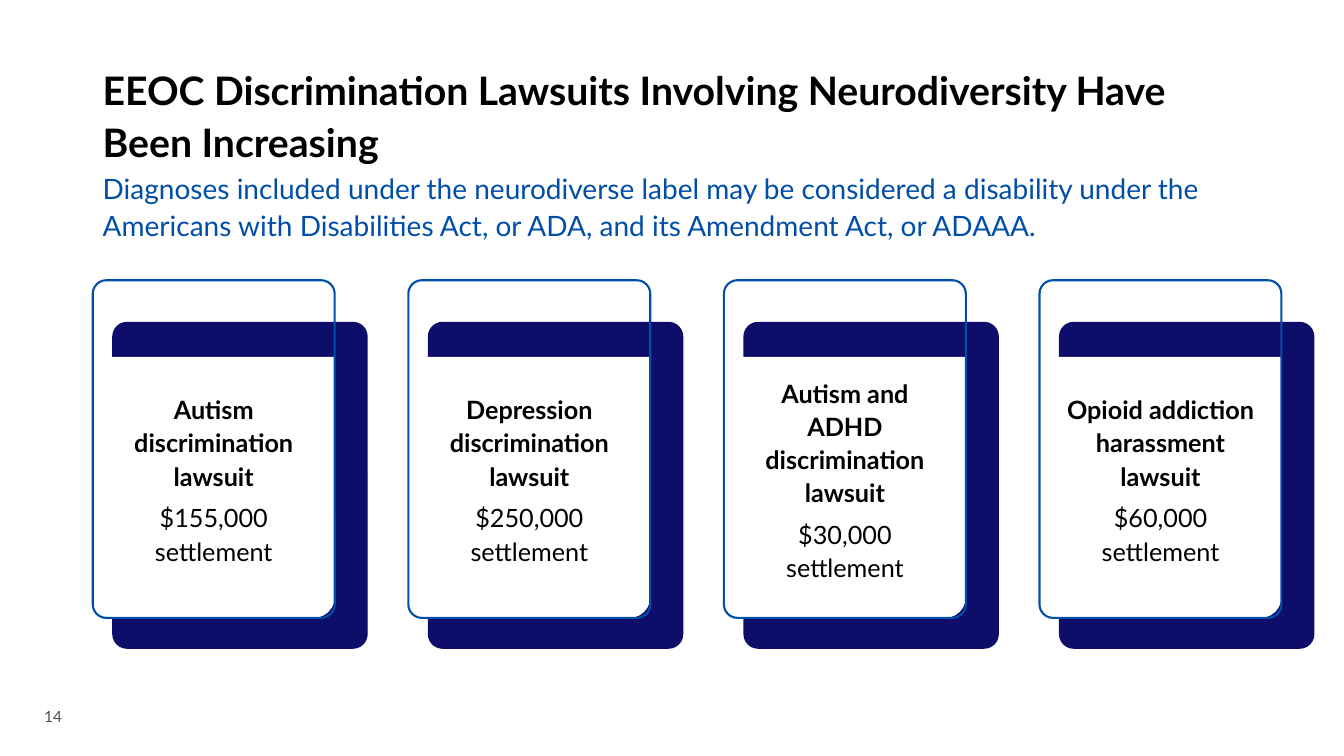
from pptx import Presentation
from pptx.dml.color import RGBColor
from pptx.enum.shapes import MSO_SHAPE as Shape
from pptx.enum.text import MSO_ANCHOR as Anchor, PP_ALIGN as Align
from pptx.util import Inches, Pt

COLORS = {"navy": "0E0D6A", "blue": "004EA8", "white": "FFFFFF", "black": "000000", "gray": "505050"}
CARDS = [
    ("Autism discrimination lawsuit", "$155,000 settlement"),
    ("Depression discrimination lawsuit", "$250,000 settlement"),
    ("Autism and ADHD discrimination lawsuit", "$30,000 settlement"),
    ("Opioid addiction harassment lawsuit", "$60,000 settlement"),
]
CARD_LEFT, CARD_STEP = 0.92, 3.13


class SlideBuilder:
    """Hold the slide style and draw each kind of element."""

    font = "Lato"

    def __init__(self, slide):
        self.slide = slide

    def color(self, name):
        return RGBColor.from_string(COLORS[name])

    def text(self, lines, left, top, width, height, size, color="black", bold_first=False,
             anchor=Anchor.TOP, align=Align.LEFT, spacing=1.1, after=0):
        box = self.slide.shapes.add_textbox(Inches(left), Inches(top), Inches(width), Inches(height))
        frame = box.text_frame
        frame.word_wrap = True
        frame.vertical_anchor = anchor
        for index, line in enumerate(lines):
            para = frame.add_paragraph() if index else frame.paragraphs[0]
            para.text = line
            para.alignment = align
            para.line_spacing = spacing
            para.space_after = Pt(after)
            font = para.runs[0].font
            font.name, font.size = self.font, Pt(size)
            font.bold = bold_first and index == 0
            font.color.rgb = self.color(color)

    def shape(self, kind, left, top, width, height, corners, fill=None, line=None, weight=1):
        shape = self.slide.shapes.add_shape(kind, Inches(left), Inches(top), Inches(width), Inches(height))
        shape.shadow.inherit = False
        for index, corner in enumerate(corners):
            shape.adjustments[index] = corner
        if fill:
            shape.fill.solid()
            shape.fill.fore_color.rgb = self.color(fill)
        else:
            shape.fill.background()
        if line:
            shape.line.color.rgb = self.color(line)
            shape.line.width = Pt(weight)
        else:
            shape.line.fill.background()

    def card(self, left, lines):
        self.shape(Shape.ROUNDED_RECTANGLE, left + 0.2, 3.2, 2.52, 3.23, [0.055], "navy", "navy")
        self.shape(Shape.ROUND_2_SAME_RECTANGLE, left - 0.01, 3.54, 2.41, 2.59, [0, 0.086], "white")
        self.text(lines, left + 0.11, 3.54, 2.18, 2.42, 18, bold_first=True,
                  anchor=Anchor.MIDDLE, align=Align.CENTER, after=6)
        self.shape(Shape.ROUNDED_RECTANGLE, left, 2.78, 2.4, 3.35, [0.056], line="blue", weight=1.5)


def main():
    deck = Presentation()
    deck.slide_width, deck.slide_height = Inches(13.33), Inches(7.5)
    page = SlideBuilder(deck.slides.add_slide(deck.slide_layouts[6]))
    page.text(["EEOC Discrimination Lawsuits Involving Neurodiversity Have Been Increasing"],
              0.92, 0.4, 11.5, 1.45, 28, bold_first=True, anchor=Anchor.MIDDLE)
    page.text(["14"], 0.34, 6.97, 0.5, 0.28, 11, "gray", anchor=Anchor.BOTTOM, spacing=1.0)
    page.text(["Diagnoses included under the neurodiverse label may be considered a disability under the "
               "Americans with Disabilities Act, or ADA, and its Amendment Act, or ADAAA."],
              0.92, 1.62, 11.24, 0.55, 20, "blue", after=10)
    for index, lines in enumerate(CARDS):
        page.card(CARD_LEFT + index * CARD_STEP, lines)
    deck.save("out.pptx")


if __name__ == "__main__":
    main()
